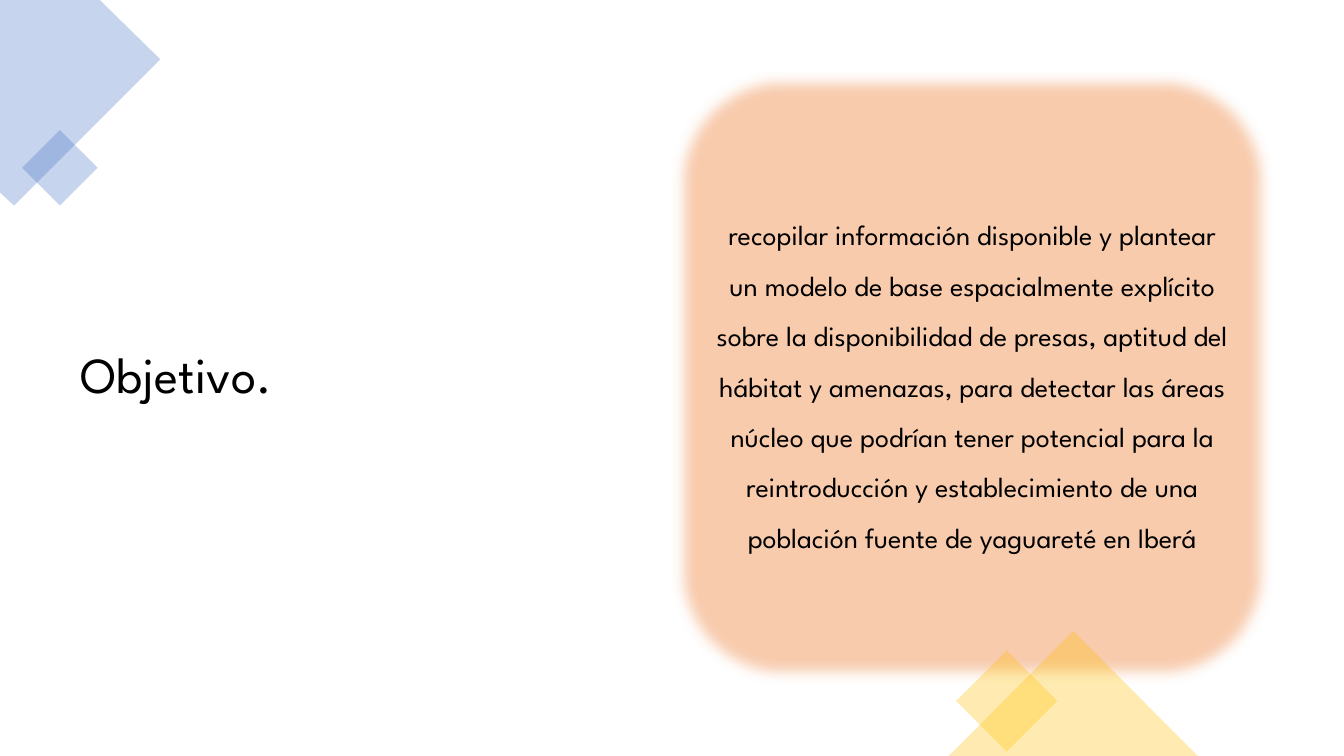
from lxml import etree
from pptx import Presentation
from pptx.dml.color import RGBColor
from pptx.enum import shapes, text
from pptx.oxml import ns
from pptx.util import Inches, Pt

BLACK = RGBColor(0x00, 0x00, 0x00)
BLUE = RGBColor(0x44, 0x72, 0xC4)
GOLD = RGBColor(0xFF, 0xC0, 0x00)
PEACH = RGBColor(0xF8, 0xCB, 0xAD)
FONT = "League Spartan"
SHAPE = shapes.MSO_SHAPE


def paint(shape, color, opacity=100):
    """Flat fill without outline or shadow; opacity in percent."""
    shape.shadow.inherit = False
    shape.line.fill.background()
    shape.fill.solid()
    shape.fill.fore_color.rgb = color
    if opacity < 100:
        color_node = shape._element.spPr.find(ns.qn("a:solidFill"))[0]
        etree.SubElement(color_node, ns.qn("a:alpha"), val=str(opacity * 1000))


def write(shape, words, size, align, spacing):
    """One paragraph, centred vertically in the shape."""
    frame = shape.text_frame
    frame.word_wrap = True
    frame.vertical_anchor = text.MSO_ANCHOR.MIDDLE
    paragraph = frame.paragraphs[0]
    paragraph.text = words
    paragraph.alignment = align
    paragraph.line_spacing = spacing
    paragraph.font.name = FONT
    paragraph.font.size = Pt(size)
    paragraph.font.color.rgb = BLACK
    return paragraph


prs = Presentation()
prs.slide_width, prs.slide_height = Inches(13.33), Inches(7.5)
slide = prs.slides.add_slide(prs.slide_layouts[6])

# Heading
heading = slide.shapes.add_textbox(Inches(0.7), Inches(0.7), Inches(5.25), Inches(6.09))
write(heading, "Objetivo.", 36, text.PP_ALIGN.LEFT, 0.9)

# Large blue diamond, cut off by the slide corner
corner = [(0, 0), (0.99, 0), (1.59, 0.59), (0.14, 2.04), (0, 1.91)]
outline = slide.shapes.build_freeform(0, 0, scale=Inches(1) / 100)
outline.add_line_segments([(x * 100, y * 100) for x, y in corner[1:]], close=True)
paint(outline.convert_to_shape(), BLUE, 30)

# Objective card with soft edges
card = slide.shapes.add_shape(
    SHAPE.ROUNDED_RECTANGLE, Inches(6.66), Inches(0.7), Inches(5.97), Inches(6.09))
paint(card, PEACH)
effects = card._element.spPr.find(ns.qn("a:effectLst"))
etree.SubElement(effects, ns.qn("a:softEdge"), rad=str(Pt(10)))
objective = write(
    card,
    "recopilar información disponible y plantear un modelo de base "
    "espacialmente explícito sobre la disponibilidad de presas, aptitud del "
    "hábitat y amenazas, para detectar las áreas núcleo que podrían tener "
    "potencial para la reintroducción y establecimiento de una población "
    "fuente de yaguareté en Iberá",
    20, text.PP_ALIGN.CENTER, 1.5)
objective.space_after = Pt(6)

# Small diamonds and the gold triangle
for kind, left, top, width, height, angle, color in [
    (SHAPE.RECTANGLE, 0.33, 1.4, 0.53, 0.53, 45, BLUE),
    (SHAPE.RECTANGLE, 9.63, 6.6, 0.71, 0.71, 45, GOLD),
    (SHAPE.ISOSCELES_TRIANGLE, 9.41, 6.26, 2.47, 1.24, 0, GOLD),
]:
    accent = slide.shapes.add_shape(
        kind, Inches(left), Inches(top), Inches(width), Inches(height))
    accent.rotation = angle
    paint(accent, color, 30)

prs.save("out.pptx")
